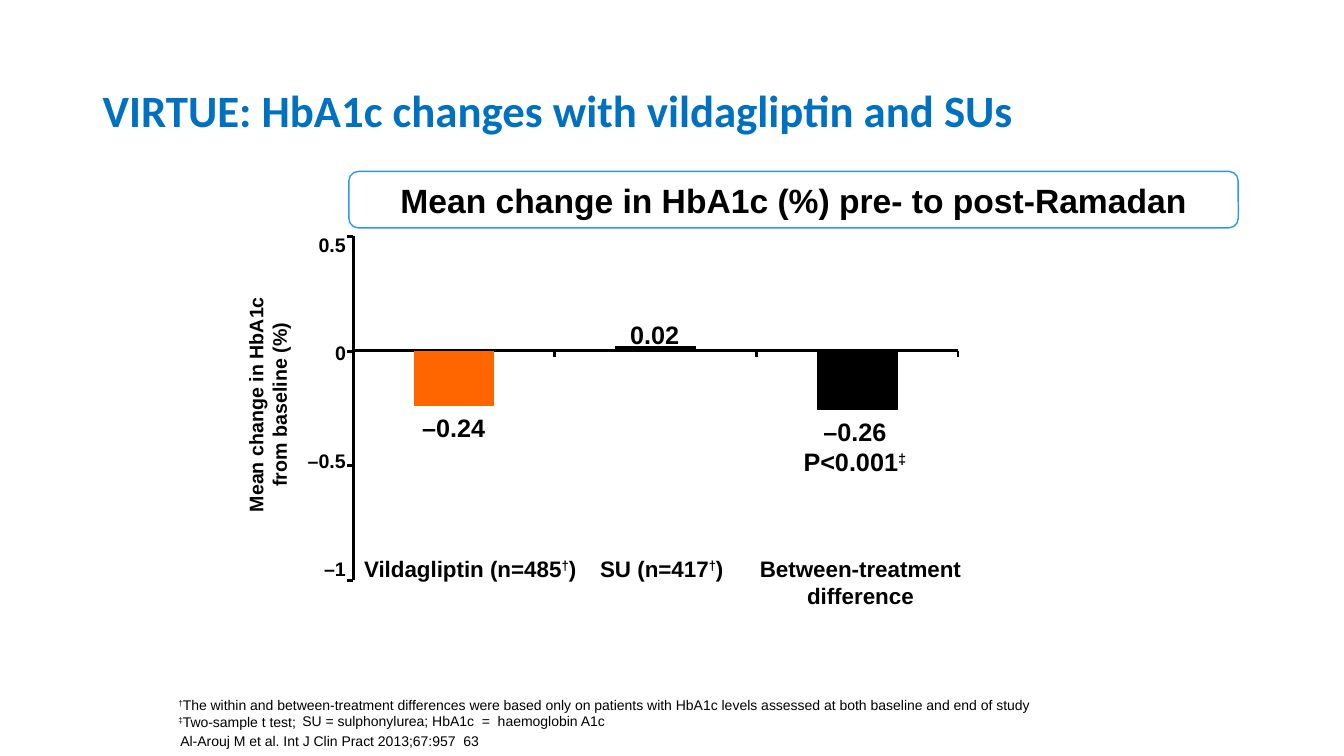
from dataclasses import dataclass
from itertools import groupby

from lxml.etree import SubElement
from pptx import Presentation
from pptx.chart.data import CategoryChartData
from pptx.dml.color import RGBColor
from pptx.enum.chart import XL_CHART_TYPE as ChartType, XL_TICK_LABEL_POSITION as TickLabels
from pptx.enum.chart import XL_TICK_MARK as TickMark
from pptx.enum.shapes import MSO_SHAPE as Preset
from pptx.enum.text import MSO_ANCHOR as Anchor, PP_ALIGN as Align
from pptx.oxml.ns import qn
from pptx.util import Inches, Pt


@dataclass(frozen=True)
class Theme:
    heading_font: str = "Calibri"
    body_font: str = "Arial"
    heading: str = "0070C0"
    ink: str = "000000"
    paper: str = "FFFFFF"
    banner_line: str = "2697FE"
    series: str = "5B9BD5"
    vildagliptin: str = "FF6600"
    title_size: int = 32
    banner_size: int = 24
    value_size: int = 18
    category_size: int = 16
    axis_size: int = 14
    note_size: int = 10


@dataclass(frozen=True)
class Box:
    left: float
    top: float
    width: float
    height: float

    def inner(self, left, top, width, height):
        """Box inside this one, given in percent of its width and height."""
        return Box(self.left + self.width * left / 100, self.top + self.height * top / 100,
                   self.width * width / 100, self.height * height / 100)

    def emu(self):
        return [Inches(n) for n in (self.left, self.top, self.width, self.height)]


THEME = Theme()
PAGE = Box(0, 0, 13.33, 7.5)
MARKS = "†‡"


def rgb(code):
    return RGBColor.from_string(code)


def write(frame, lines, size, bold=True, align=Align.CENTER, color=THEME.ink,
          font=THEME.body_font):
    """One paragraph per line; footnote marks become superscript runs."""
    for index, line in enumerate(lines):
        paragraph = frame.paragraphs[0] if index == 0 else frame.add_paragraph()
        paragraph.alignment = align
        for row, words in enumerate(line.split("\n")):
            if row:
                paragraph.add_line_break()
            for is_mark, letters in groupby(words, lambda letter: letter in MARKS):
                run = paragraph.add_run()
                run.text = "".join(letters)
                run.font.name, run.font.size, run.font.bold = font, Pt(size), bold
                run.font.color.rgb = rgb(color)
                if is_mark:
                    run._r.get_or_add_rPr().set("baseline", "30000")


def label(slide, box, lines, size, wrap=True, **style):
    text = slide.shapes.add_textbox(*box.emu())
    text.text_frame.word_wrap = wrap
    write(text.text_frame, lines, size, **style)
    return text


def add_title(slide, box):
    title = label(slide, box, ["VIRTUE: HbA1c changes with vildagliptin and SUs"],
                  THEME.title_size, align=Align.LEFT, color=THEME.heading,
                  font=THEME.heading_font)
    title.text_frame.vertical_anchor = Anchor.MIDDLE
    title.text_frame.paragraphs[0].line_spacing = 0.9


def add_banner(slide, box):
    banner = slide.shapes.add_shape(Preset.ROUNDED_RECTANGLE, *box.emu())
    banner.shadow.inherit = False
    banner.fill.solid()
    banner.fill.fore_color.rgb = rgb(THEME.paper)
    banner.line.color.rgb = rgb(THEME.banner_line)
    banner.line.width = Pt(1)
    banner.text_frame.word_wrap = True
    banner.text_frame.vertical_anchor = Anchor.MIDDLE
    write(banner.text_frame, ["Mean change in HbA1c (%) pre- to post-Ramadan"], THEME.banner_size)


def style_axis(axis):
    axis.has_major_gridlines = False
    axis.major_tick_mark, axis.minor_tick_mark = TickMark.OUTSIDE, TickMark.NONE
    axis.tick_label_position = TickLabels.NONE
    axis.format.line.color.rgb = rgb(THEME.ink)
    axis.format.line.width = Pt(2)


def fix_plot_area(chart, **shares):
    """Pin the inner plot area to shares of the chart frame."""
    area = chart._chartSpace.chart.plotArea
    layout = area.find(qn("c:layout"))
    if layout is None:
        layout = SubElement(area, qn("c:layout"))
        area.insert(0, layout)
    manual = SubElement(layout, qn("c:manualLayout"))
    settings = {"layoutTarget": "inner", "xMode": "edge", "yMode": "edge", **shares}
    for name, value in settings.items():
        SubElement(manual, qn("c:" + name)).set("val", str(value))


def add_columns(slide, box):
    changes = CategoryChartData()
    changes.categories = ["1", "2", "3"]
    changes.add_series("Series 1", (-92, 8, -100))
    chart = slide.shapes.add_chart(ChartType.COLUMN_CLUSTERED, *box.emu(), changes).chart
    chart.has_legend = chart.has_title = False
    chart.font.name, chart.font.size = THEME.heading_font, Pt(THEME.value_size)
    chart.font.color.rgb = rgb(THEME.ink)
    style_axis(chart.category_axis)
    style_axis(chart.value_axis)
    scale = chart.value_axis
    scale.minimum_scale, scale.maximum_scale, scale.major_unit = -385, 192, 192
    plot = chart.plots[0]
    plot.gap_width, plot.vary_by_categories = 150, False
    columns = plot.series[0]
    columns.invert_if_negative = False
    columns.format.fill.solid()
    columns.format.fill.fore_color.rgb = rgb(THEME.series)
    for index, color in enumerate((THEME.vildagliptin, THEME.ink, THEME.ink)):
        fill = columns.points[index].format.fill
        fill.solid()
        fill.fore_color.rgb = rgb(color)
    fix_plot_area(chart, x=0.02, y=0.02, w=0.96, h=0.96)


def add_chart_region(slide, box):
    add_columns(slide, box)
    for step, tick in enumerate(("0.5", "0", "–0.5", "–1")):
        label(slide, box.inner(-11.2, -0.28 + 30.1 * step, 13.6, 9.55), [tick],
              THEME.axis_size, align=Align.RIGHT)
    axis_title = label(slide, box.inner(-38.24, 41, 53.28, 16),
                       ["Mean change in HbA1c\nfrom baseline (%)"], THEME.axis_size)
    axis_title.rotation = 270

    categories = (("Vildagliptin (n=485†)", 1.76, 37.6, False),
                  ("SU (n=417†)", 39.36, 23.2, False),
                  ("Between-treatment difference", 64, 36.96, True))
    for name, left, width, wrap in categories:
        label(slide, box.inner(left, 89.6, width, 10.4), [name], THEME.category_size, wrap)

    values = ((["–0.24"], 9.92, 49.72, 16), (["0.02"], 43.52, 23.88, 12.64),
              (["–0.26", "P<0.001‡"], 71.68, 50.84, 19.84))
    for lines, left, top, width in values:
        label(slide, box.inner(left, top, width, 11.24 if len(lines) == 1 else 19.94),
              lines, THEME.value_size, wrap=len(lines) == 1)


def add_notes(slide, box):
    notes = (
        (box, ["†The within and between-treatment differences were based only on patients "
               "with HbA1c levels assessed at both baseline and end of study",
               "‡Two-sample t test;"]),
        (box.inner(12.3, 26.23, 70.9, 44.26), ["SU = sulphonylurea; HbA1c  =  haemoglobin A1c"]),
        (box.inner(0.2, 59, 100.3, 44.26), ["Al-Arouj M et al. Int J Clin Pract 2013;67:957  63"]),
    )
    for place, lines in notes:
        label(slide, place, lines, THEME.note_size, bold=False, align=Align.LEFT)


def main():
    deck = Presentation()
    deck.slide_width, deck.slide_height = Inches(PAGE.width), Inches(PAGE.height)
    slide = deck.slides.add_slide(deck.slide_layouts[6])
    add_title(slide, PAGE.inner(6.9, 5.33, 86.25, 19.33))
    add_chart_region(slide, PAGE.inner(25.35, 30.27, 46.88, 47.47))
    add_banner(slide, PAGE.inner(25.96, 22.67, 66.17, 7.47))
    add_notes(slide, PAGE.inner(12.53, 91.47, 75, 8.13))
    deck.save("out.pptx")


if __name__ == "__main__":
    main()
